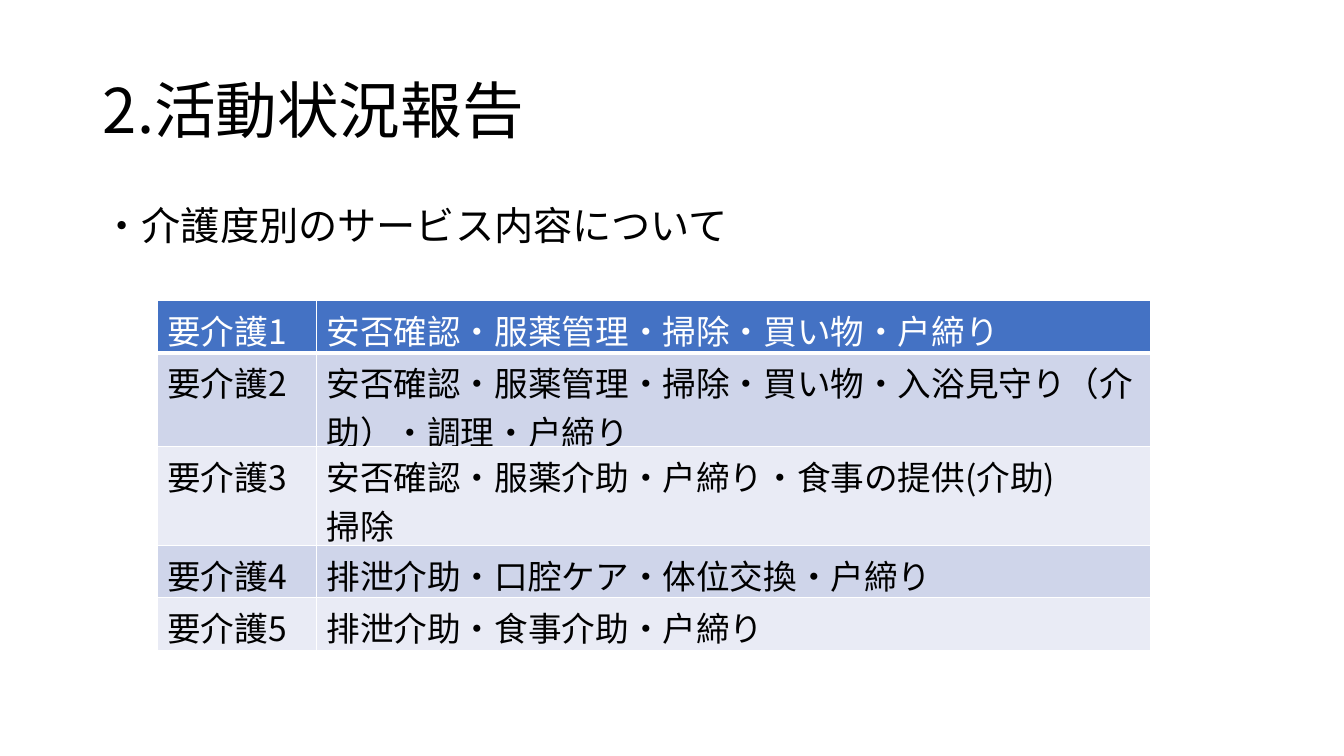
from lxml.etree import SubElement
from pptx import Presentation
from pptx.dml.color import RGBColor
from pptx.enum.text import MSO_ANCHOR as Anchor, MSO_AUTO_SIZE as AutoSize, PP_ALIGN as Align
from pptx.oxml.ns import qn
from pptx.util import Inches, Pt

TITLE = "2.活動状況報告"
LEAD = "・介護度別のサービス内容について"
SERVICES = [
    "安否確認・服薬管理・掃除・買い物・戸締り",
    "安否確認・服薬管理・掃除・買い物・入浴見守り（介助）・調理・戸締り",
    "安否確認・服薬介助・戸締り・食事の提供(介助)　　掃除",
    "排泄介助・口腔ケア・体位交換・戸締り",
    "排泄介助・食事介助・戸締り",
]
CARE_ROWS = [(f"要介護{level}", service) for level, service in enumerate(SERVICES, 1)]


def color(hex_string):
    return RGBColor.from_string(hex_string)


class SlideBuilder:
    """Places elements on one slide; all lengths are percentages of its size."""

    FONT = "Noto Sans CJK JP"
    BLACK, WHITE = "000000", "FFFFFF"
    HEADER, BANDS = "4472C4", ("CFD5EA", "E9EBF5")

    def __init__(self, deck):
        self.deck = deck
        self.slide = deck.slides.add_slide(deck.slide_layouts[5])

    def across(self, percent):
        return round(self.deck.slide_width * percent / 100)

    def down(self, percent):
        return round(self.deck.slide_height * percent / 100)

    def area(self, left, top, width, height):
        return self.across(left), self.down(top), self.across(width), self.down(height)

    def add_words(self, frame, text, size, fill, **para_format):
        para = frame.paragraphs[0]
        for name, value in {"alignment": Align.LEFT, **para_format}.items():
            setattr(para, name, value)
        span = para.add_run()
        span.text = text
        for name, value in {"name": self.FONT, "size": Pt(size), "bold": False}.items():
            setattr(span.font, name, value)
        span.font.color.rgb = color(fill)
        SubElement(span.font._element, qn("a:ea"), typeface=self.FONT)

    def title(self, text, *area):
        box = self.slide.shapes.title
        for name, value in zip(("left", "top", "width", "height"), self.area(*area)):
            setattr(box, name, value)
        frame = box.text_frame
        frame.auto_size = AutoSize.NONE
        frame.vertical_anchor = Anchor.MIDDLE
        self.add_words(frame, text, 44, self.BLACK, line_spacing=0.9)

    def text(self, text, *area):
        frame = self.slide.shapes.add_textbox(*self.area(*area)).text_frame
        frame.word_wrap = True
        self.add_words(frame, text, 28, self.BLACK, line_spacing=0.9, space_before=Pt(10))

    def borders(self, cell, **widths):
        """Draws white borders; widths are points by side, L, R, T and B."""
        properties = cell._tc.get_or_add_tcPr()
        for side, width in widths.items():
            line = SubElement(properties, qn(f"a:ln{side}"), w=str(Pt(width)))
            paint = SubElement(line, qn("a:solidFill"))
            SubElement(paint, qn("a:srgbClr"), val=self.WHITE)

    def table(self, rows, left, top, widths, heights):
        area = self.area(left, top, sum(widths), sum(heights))
        grid = self.slide.shapes.add_table(len(rows), len(widths), *area).table
        grid.horz_banding = False
        for column, width in zip(grid.columns, widths):
            column.width = self.across(width)
        for index, (row, height, texts) in enumerate(zip(grid.rows, heights, rows)):
            row.height = self.down(height)
            is_header = index == 0
            fill = self.HEADER if is_header else self.BANDS[(index - 1) % 2]
            for cell, text in zip(row.cells, texts):
                self.borders(cell, L=1, R=1, T=3 if index == 1 else 1, B=3 if is_header else 1)
                cell.fill.solid()
                cell.fill.fore_color.rgb = color(fill)
                self.add_words(cell.text_frame, text, 24, self.WHITE if is_header else self.BLACK)


def main():
    deck = Presentation()
    deck.slide_width, deck.slide_height = Inches(13.33), Inches(7.5)
    page = SlideBuilder(deck)
    page.title(TITLE, 6.9, 5.33, 86.25, 19.33)
    page.text(LEAD, 6.9, 26.67, 86.25, 63.47)
    page.table(CARE_ROWS, 11.7, 39.75, (11.85, 62.05), (6.93, 12.4, 13.07, 6.93, 6.93))
    deck.save("out.pptx")


if __name__ == "__main__":
    main()
